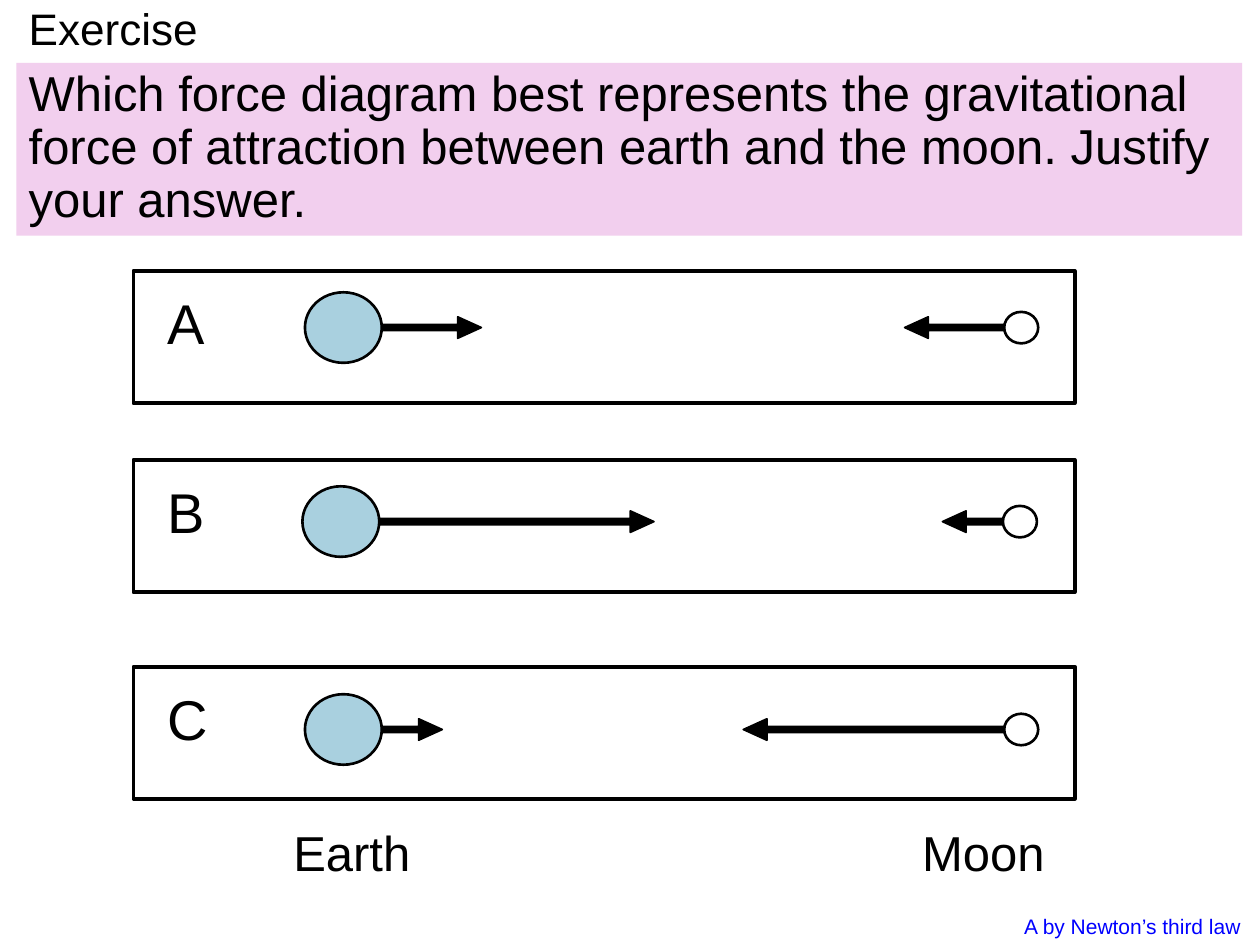
from pptx import Presentation
from pptx.dml.color import RGBColor
from pptx.enum.shapes import MSO_SHAPE
from pptx.enum.text import MSO_ANCHOR
from pptx.util import Inches, Pt

RECT, OVAL = MSO_SHAPE.RECTANGLE, MSO_SHAPE.OVAL
RIGHT, LEFT = MSO_SHAPE.RIGHT_ARROW, MSO_SHAPE.LEFT_ARROW
TOP, MIDDLE = MSO_ANCHOR.TOP, MSO_ANCHOR.MIDDLE

# Content
TITLE = "Exercise"
QUESTION = ("Which force diagram best represents the gravitational force of "
            "attraction between earth and the moon. Justify your answer.")
# letter, panel top, centre line, Earth left, Moon left, force on Earth, on Moon
CASES = [
    ("A", 2.15, 2.6, 2.42, 7.97, 0.79, 0.79),
    ("B", 3.65, 4.14, 2.4, 7.96, 2.18, 0.48),
    ("C", 5.29, 5.79, 2.42, 7.97, 0.48, 2.07),
]
# text, box, size, colour
NOTES = [
    ("Earth", (2.23, 6.48, 1.14, 0.57), "body", "ink"),
    ("Moon", (7.22, 6.48, 1.19, 0.57), "body", "ink"),
    ("A by Newton’s third law", (8.03, 7.2, 1.93, 0.3), "note", "blue"),
]

THEME = {
    "font": "Arial",
    "ink": "000000", "white": "FFFFFF", "pink": "F2CFEE",
    "earth": "A9D0DF", "blue": "0000FF",
    "title": 25.2, "body": 28, "letter": 32, "note": 12,
}
PANEL = (1.06, 7.47, 1.05)  # left, width, height
EARTH, MOON = (0.61, 0.56), (0.27, 0.25)
THICK = 0.17

deck = Presentation()
deck.slide_width, deck.slide_height = Inches(10), Inches(7.5)
slide = deck.slides.add_slide(deck.slide_layouts[6])


def tint(name):
    return RGBColor.from_string(THEME[name])


def shape(kind, box, fill, line=None):
    item = slide.shapes.add_shape(kind, *map(Inches, box))
    item.shadow.inherit = False
    item.fill.solid()
    item.fill.fore_color.rgb = tint(fill)
    if line:
        item.line.color.rgb = tint("ink")
        item.line.width = Pt(line)
    else:
        item.line.fill.background()
    return item


def label(text, box, size, color="ink", wrap=False, space=1.0, anchor=TOP,
          fill=None):
    item = slide.shapes.add_textbox(*map(Inches, box))
    if fill:
        item.fill.solid()
        item.fill.fore_color.rgb = tint(fill)
    frame = item.text_frame
    frame.word_wrap = wrap
    frame.vertical_anchor = anchor
    para = frame.paragraphs[0]
    para.line_spacing = space
    run = para.add_run()
    run.text = text
    run.font.name = THEME["font"]
    run.font.size = Pt(THEME[size])
    run.font.color.rgb = tint(color)


def ball(left, mid, size, fill):
    wide, high = size
    shape(OVAL, (left, mid - high / 2, wide, high), fill, 1.5)


def force(kind, left, mid, span):
    arrow = shape(kind, (left, mid - THICK / 2, span, THICK), "ink", 1)
    arrow.adjustments[0] = 0.29
    arrow.adjustments[1] = 1.1


# Title and question
label(TITLE, (0.13, 0, 7.23, 0.5), "title", wrap=True, space=0.9, anchor=MIDDLE)
label(QUESTION, (0.13, 0.5, 9.73, 1.37), "body", wrap=True, space=0.9,
      fill="pink")

# Force diagrams
for letter, top, mid, earth, moon, pull, back in CASES:
    left, wide, high = PANEL
    shape(RECT, (left, top, wide, high), "white", 2.25)
    label(letter, (left + 0.17, top + 0.09, 0.5, 0.64), "letter")
    ball(earth, mid, EARTH, "earth")
    ball(moon, mid, MOON, "white")
    force(RIGHT, earth + EARTH[0], mid, pull)
    force(LEFT, moon - back, mid, back)

# Names and answer
for text, box, size, color in NOTES:
    label(text, box, size, color)

deck.save("out.pptx")
